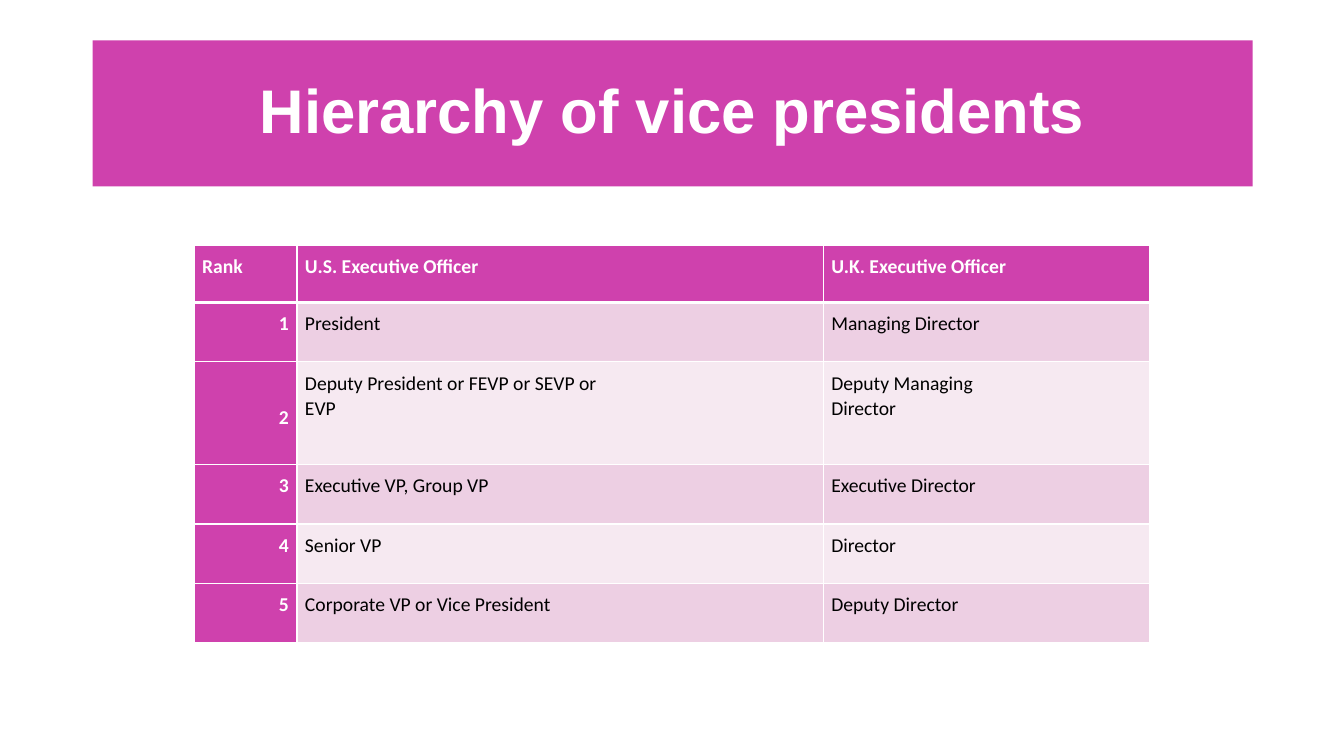
from lxml import etree
from pptx import Presentation
from pptx.dml.color import RGBColor
from pptx.enum.text import MSO_ANCHOR, PP_ALIGN
from pptx.oxml.ns import qn
from pptx.util import Inches, Pt

LEFT, CENTER, RIGHT = PP_ALIGN.LEFT, PP_ALIGN.CENTER, PP_ALIGN.RIGHT
TOP, MIDDLE = MSO_ANCHOR.TOP, MSO_ANCHOR.MIDDLE

COLORS = {
    "accent": "CF41AD",
    "band_dark": "EDCFE3",
    "band_light": "F6E9F1",
    "white": "FFFFFF",
    "black": "000000",
}
TITLE_FONT = {"name": "Arial", "size": Pt(44), "bold": True}
HEADING_FONT = {"name": "Calibri", "size": Pt(14), "bold": True}
BODY_FONT = {**HEADING_FONT, "bold": False}
CELL_FORMAT = {
    "margin_left": Inches(0.08),
    "margin_top": Inches(0.08),
    "margin_right": Inches(0.08),
    "margin_bottom": 0,
}

SLIDE_W, SLIDE_H = Inches(13.33), Inches(7.5)
COLUMN_WIDTHS = [1.02, 5.22, 3.24]
HEADER_HEIGHT, LINE_ROW, TWO_LINE_ROW = 0.57, 0.59, 1.02
THIN, THICK = Pt(1), Pt(3)

RANKS = [
    ("Rank", "U.S. Executive Officer", "U.K. Executive Officer"),
    ("1", "President", "Managing Director"),
    ("2", "Deputy President or FEVP or SEVP or\nEVP", "Deputy Managing\nDirector"),
    ("3", "Executive VP, Group VP", "Executive Director"),
    ("4", "Senior VP", "Director"),
    ("5", "Corporate VP or Vice President", "Deputy Director"),
]


def color(name):
    return RGBColor.from_string(COLORS[name])


def apply(target, values):
    for attribute, value in values.items():
        setattr(target, attribute, value)


def paint(target, name):
    target.fill.solid()
    target.fill.fore_color.rgb = color(name)


def write(frame, text, font, color_name, align, spacing):
    frame.text = text
    for paragraph in frame.paragraphs:
        apply(paragraph, {"alignment": align, "line_spacing": spacing})
        for run in paragraph.runs:
            apply(run.font, font)
            run.font.color.rgb = color(color_name)


def add_borders(cell, top, bottom):
    properties = cell._tc.get_or_add_tcPr()
    for side, width in zip("LRTB", (THIN, THIN, top, bottom)):
        line = etree.SubElement(properties, qn(f"a:ln{side}"), w=str(width))
        solid = etree.SubElement(line, qn("a:solidFill"))
        etree.SubElement(solid, qn("a:srgbClr"), val=COLORS["white"])


def add_title(slide, text):
    banner = slide.shapes.title
    apply(banner, {
        "left": int(SLIDE_W * 0.069),
        "top": Inches(0.4),
        "width": int(SLIDE_W * 0.863),
        "height": Inches(1.45),
    })
    paint(banner, "accent")
    apply(banner.text_frame, {"vertical_anchor": MIDDLE, "word_wrap": True})
    write(banner.text_frame, text, TITLE_FONT, "white", CENTER, 0.9)


def format_cell(cell, text, row, column):
    is_header, is_rank = row == 0, column == 0
    is_heading = is_header or is_rank
    band = "band_dark" if row % 2 else "band_light"

    # Borders come before the fill in the cell properties
    add_borders(cell, THICK if row == 1 else THIN, THICK if is_header else THIN)
    paint(cell, "accent" if is_heading else band)
    apply(cell, CELL_FORMAT)

    # The rank beside a two-line row is centred vertically
    cell.vertical_anchor = MIDDLE if is_rank and "\n" in RANKS[row][1] else TOP
    write(
        cell.text_frame,
        text,
        HEADING_FONT if is_heading else BODY_FONT,
        "white" if is_heading else "black",
        RIGHT if is_rank and not is_header else LEFT,
        1.07,
    )


def add_rank_table(slide):
    heights = [HEADER_HEIGHT] + [
        TWO_LINE_ROW if "\n" in us_title else LINE_ROW for _, us_title, _ in RANKS[1:]
    ]
    width = Inches(sum(COLUMN_WIDTHS))
    table = slide.shapes.add_table(
        len(RANKS), len(COLUMN_WIDTHS),
        (SLIDE_W - width) // 2, Inches(2.43), width, Inches(sum(heights)),
    ).table
    for column, column_width in zip(table.columns, COLUMN_WIDTHS):
        column.width = Inches(column_width)
    for row, height in zip(table.rows, heights):
        row.height = Inches(height)
    for row, titles in enumerate(RANKS):
        for column, text in enumerate(titles):
            format_cell(table.cell(row, column), text, row, column)


def main():
    deck = Presentation()
    apply(deck, {"slide_width": SLIDE_W, "slide_height": SLIDE_H})
    slide = deck.slides.add_slide(deck.slide_layouts.get_by_name("Title Only"))
    add_title(slide, "Hierarchy of vice presidents")
    add_rank_table(slide)
    deck.save("out.pptx")


if __name__ == "__main__":
    main()
